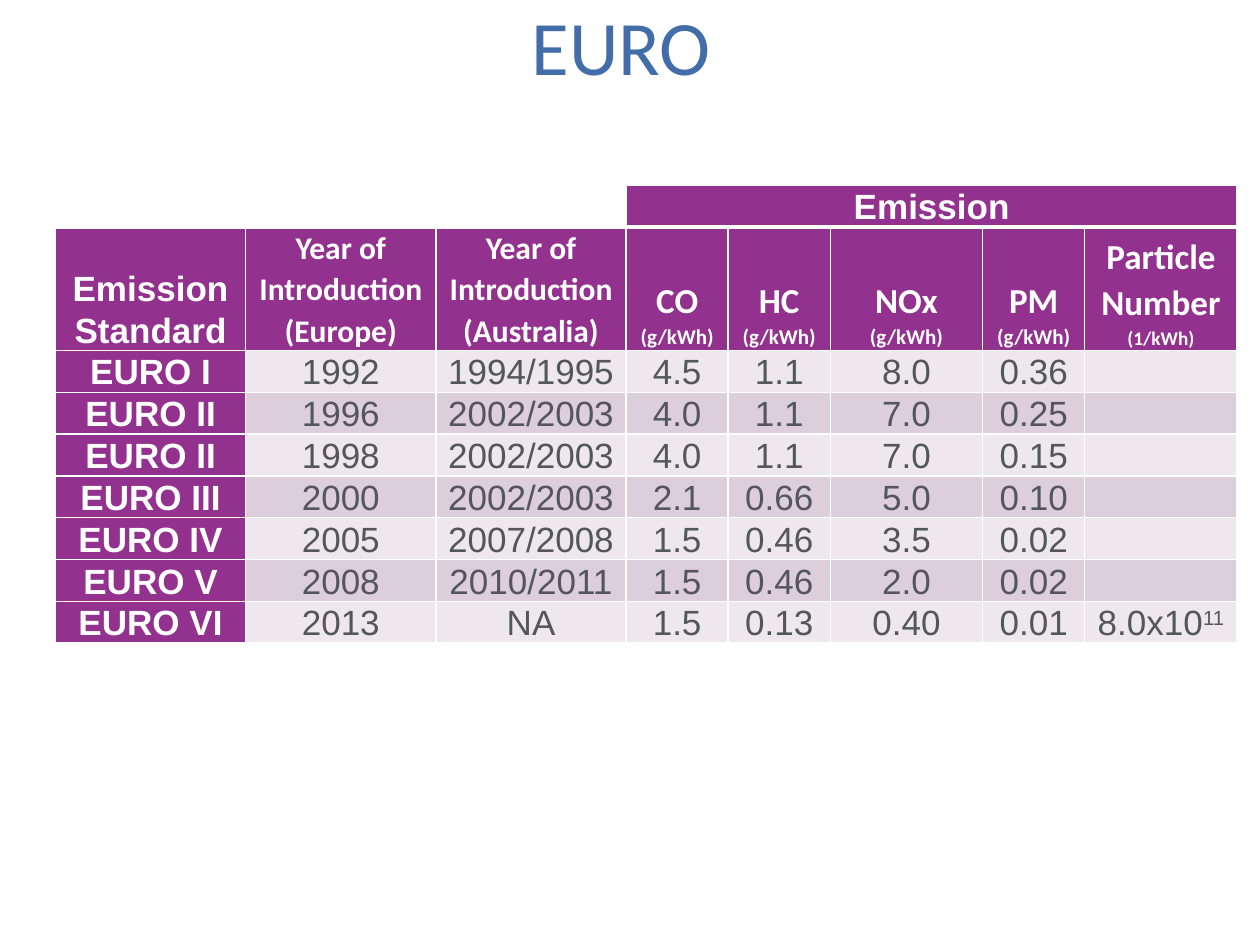
from lxml import etree
from pptx import Presentation
from pptx import util as u
from pptx.dml.color import RGBColor
from pptx.enum import text
from pptx.oxml.ns import qn

COLORS = {
    "title": "426DA9", "header": "93328E", "white": "FFFFFF",
    "body": "53565A", "light": "EEE8EE", "dark": "DCCEDB",
}
WIDE, MEDIUM, NARROW = 1.51, 1.21, 0.81
COLUMNS = [WIDE, WIDE, WIDE, NARROW, NARROW, MEDIUM, NARROW, MEDIUM]
LINE, HEADER_HEIGHT = 0.33, 0.97

# Each heading: name, name size, font, unit, unit size
HEADINGS = [
    ("Emission Standard", 20, "Arial", "", 0),
    ("Year of Introduction (Europe)", 18, "Calibri", "", 0),
    ("Year of Introduction (Australia)", 18, "Calibri", "", 0),
    ("CO ", 20, "Calibri", "(g/kWh)", 12),
    ("HC ", 20, "Calibri", "(g/kWh)", 12),
    ("NOx ", 20, "Calibri", "(g/kWh)", 12),
    ("PM ", 20, "Calibri", "(g/kWh)", 12),
    ("Particle Number ", 20, "Calibri", "(1/kWh)", 11),
]
STANDARDS = [
    ("EURO I", "1992", "1994/1995", "4.5", "1.1", "8.0", "0.36", ""),
    ("EURO II", "1996", "2002/2003", "4.0", "1.1", "7.0", "0.25", ""),
    ("EURO II", "1998", "2002/2003", "4.0", "1.1", "7.0", "0.15", ""),
    ("EURO III", "2000", "2002/2003", "2.1", "0.66", "5.0", "0.10", ""),
    ("EURO IV", "2005", "2007/2008", "1.5", "0.46", "3.5", "0.02", ""),
    ("EURO V", "2008", "2010/2011", "1.5", "0.46", "2.0", "0.02", ""),
    ("EURO VI", "2013", "NA", "1.5", "0.13", "0.40", "0.01", "8.0x10"),
]


def color(name):
    return RGBColor.from_string(COLORS[name])


def write(frame, words, size=20, font="Arial", ink="white", bold=False,
          spacing=None, superscript=False):
    """Append a formatted run to the centred first paragraph."""
    paragraph = frame.paragraphs[0]
    paragraph.alignment = text.PP_ALIGN.CENTER
    if spacing:
        paragraph.line_spacing = spacing
    run = paragraph.add_run()
    run.text = words
    run.font.size = u.Pt(size)
    run.font.name = font
    run.font.bold = bold
    run.font.color.rgb = color(ink)
    if superscript:
        run.font._element.set("baseline", "30000")


def set_borders(cell, top=1, bottom=1):
    properties = cell._tc.get_or_add_tcPr()
    widths = {"lnL": 1, "lnR": 1, "lnT": top, "lnB": bottom}
    for position, (side, width) in enumerate(widths.items()):
        line = etree.Element(qn(f"a:{side}"), w=str(u.Pt(width)))
        fill = etree.SubElement(line, qn("a:solidFill"))
        etree.SubElement(fill, qn("a:srgbClr"), val=COLORS["white"])
        properties.insert(position, line)


def style_cell(cell, fill, **borders):
    cell.fill.solid()
    cell.fill.fore_color.rgb = color(fill)
    cell.margin_left = cell.margin_right = u.Inches(0.07)
    cell.margin_top = cell.margin_bottom = 0
    cell.vertical_anchor = text.MSO_ANCHOR.BOTTOM
    set_borders(cell, **borders)


def add_title(slide):
    title = slide.shapes.title
    title.left, title.top = u.Inches(0.43), u.Inches(-0.27)
    title.width, title.height = u.Inches(9), u.Inches(1.25)
    title.text_frame.vertical_anchor = text.MSO_ANCHOR.MIDDLE
    write(title.text_frame, "EURO", size=44, font="Calibri", ink="title")


def add_grid(slide):
    heights = [LINE, HEADER_HEIGHT] + [LINE] * len(STANDARDS)
    table = slide.shapes.add_table(
        len(heights), len(COLUMNS), u.Inches(0.44), u.Inches(1.47),
        u.Inches(sum(COLUMNS)), u.Inches(sum(heights))).table
    table.first_row = table.horz_banding = False
    for column, width in zip(table.columns, COLUMNS):
        column.width = u.Inches(width)
    for row, height in zip(table.rows, heights):
        row.height = u.Inches(height)
    return table


def fill_headings(table):
    # Group heading over the five emission columns
    for col in range(len(COLUMNS)):
        style_cell(table.cell(0, col), "white" if col < 3 else "header", bottom=3)
    emission = table.cell(0, 3)
    emission.merge(table.cell(0, 7))
    write(emission.text_frame, "Emission", bold=True, spacing=1.07)

    # Column headings with units
    for col, (name, size, font, unit, unit_size) in enumerate(HEADINGS):
        cell = table.cell(1, col)
        style_cell(cell, "header", top=3)
        write(cell.text_frame, name, size=size, font=font, bold=True, spacing=1.07)
        if unit:
            write(cell.text_frame, unit, size=unit_size, font=font, bold=True)


def fill_standards(table):
    for row, values in enumerate(STANDARDS):
        band = "dark" if row % 2 else "light"
        for col, value in enumerate(values):
            cell = table.cell(row + 2, col)
            is_name = col == 0
            style_cell(cell, "header" if is_name else band)
            if value:
                write(cell.text_frame, value, ink="white" if is_name else "body",
                      bold=is_name, spacing=1.07)
    # Exponent of the particle limit
    write(table.cell(len(STANDARDS) + 1, 7).text_frame, "11", ink="body",
          superscript=True)


def main():
    deck = Presentation()
    deck.slide_width, deck.slide_height = u.Inches(10), u.Inches(7.5)
    slide = deck.slides.add_slide(deck.slide_layouts[5])
    add_title(slide)
    table = add_grid(slide)
    fill_headings(table)
    fill_standards(table)
    deck.save("out.pptx")


if __name__ == "__main__":
    main()
